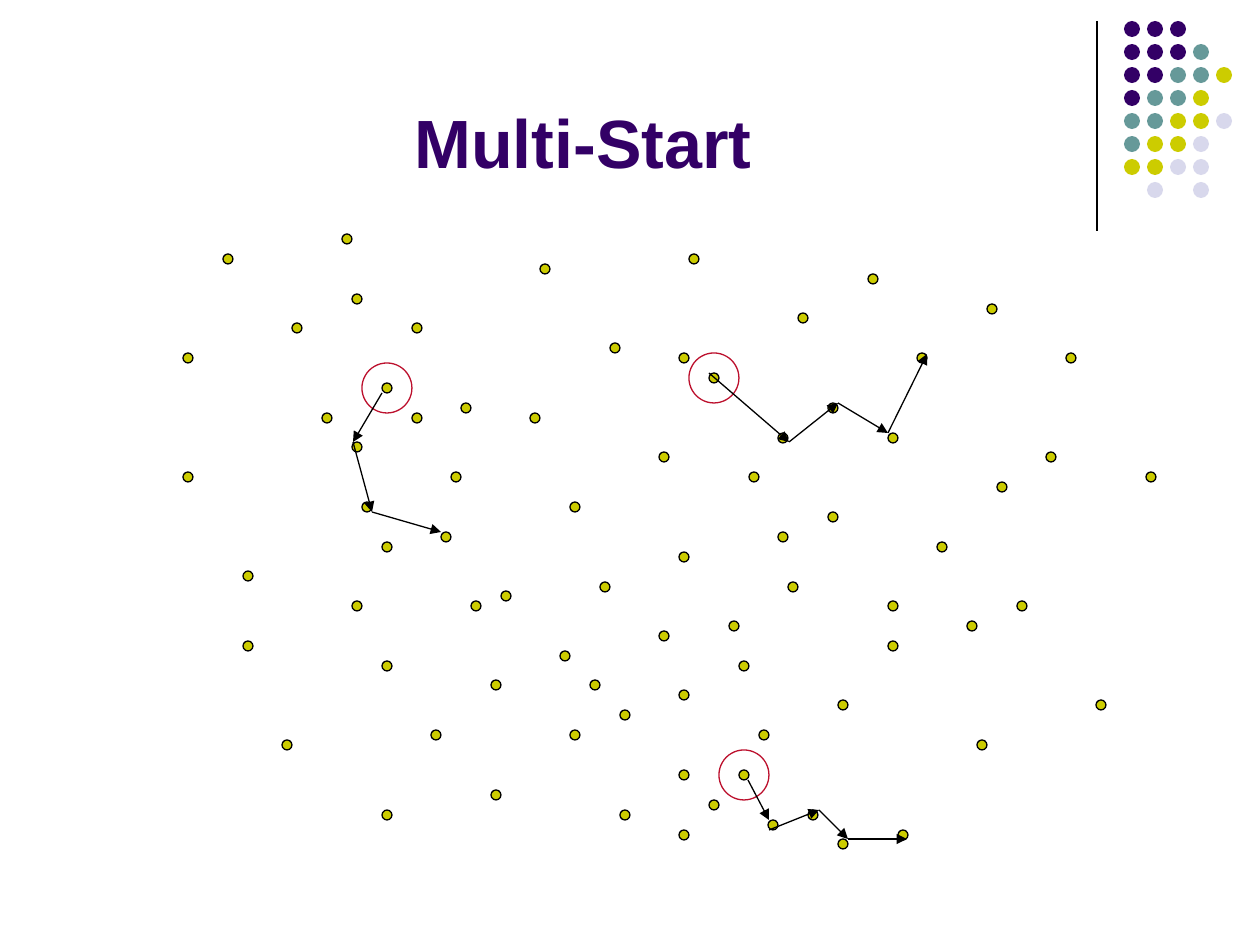
from itertools import pairwise

from lxml.etree import SubElement
from pptx import Presentation
from pptx.dml.color import RGBColor
from pptx.enum.shapes import MSO_CONNECTOR, MSO_SHAPE
from pptx.enum.text import MSO_ANCHOR, PP_ALIGN
from pptx.oxml.ns import qn
from pptx.util import Emu, Pt

PX_PER_INCH = 126
SLIDE_SIZE = (1260, 945)
BLACK, PURPLE, OLIVE, RED = "000000", "330066", "CCCC00", "BC102D"

TITLE = "Multi-Start"
TITLE_BOX = (63, 9, 1040, 179)

# Corner ornament: one letter per dot, a space where there is none
ORNAMENT_COLORS = {"P": PURPLE, "T": "669999", "O": OLIVE, "L": "D8D8EC"}
ORNAMENT = ["PPP", "PPPT", "PPTTO", "PTTO", "TTOOL", "TOOL", "OOLL", " L L"]
ORNAMENT_CENTER, ORNAMENT_PITCH, ORNAMENT_DOT = (1132, 29), 23, 16
RULE = [(1097, 21), (1097, 231)]

# Solutions in the search space, as centres, by rows from the top
SOLUTIONS = [
    (347, 239), (228, 259), (694, 259), (545, 269), (873, 279), (357, 299),
    (992, 309), (803, 318), (297, 328), (417, 328), (615, 348), (188, 358),
    (684, 358), (922, 358), (1071, 358), (714, 378), (387, 388), (466, 408),
    (833, 408), (327, 418), (417, 418), (535, 418), (783, 438), (893, 438),
    (357, 447), (664, 457), (1051, 457), (188, 477), (456, 477), (754, 477),
    (1151, 477), (1002, 487), (367, 507), (575, 507), (833, 517), (446, 537),
    (783, 537), (387, 547), (942, 547), (684, 557), (248, 576), (605, 587),
    (793, 587), (506, 596), (357, 606), (476, 606), (893, 606), (1022, 606),
    (734, 626), (972, 626), (664, 636), (248, 646), (893, 646), (565, 656),
    (387, 666), (744, 666), (496, 685), (595, 685), (684, 695), (843, 705),
    (1101, 705), (625, 715), (436, 735), (575, 735), (764, 735), (287, 745),
    (982, 745), (684, 775), (744, 775), (496, 795), (714, 805), (387, 815),
    (625, 815), (813, 815), (773, 825), (684, 835), (903, 835), (843, 844),
]
SOLUTION_DOT = 10

STARTS = [(387, 388), (714, 378), (744, 775)]
START_RING = 50
SEARCH_PATHS = [
    [(382, 393), (353, 442), (372, 512), (441, 532)],
    [(709, 373), (789, 442), (838, 403), (888, 433), (927, 354)],
    [(748, 780), (769, 820)],
    [(769, 830), (819, 810), (848, 839), (907, 839)],
]


def px(length):
    return Emu(round(length * 914400 / PX_PER_INCH))


def color(hex_code):
    return RGBColor.from_string(hex_code)


def set_line(line, hex_code):
    line.color.rgb = color(hex_code)
    line.width = Pt(0.75)


def add_circle(slide, center, diameter, fill=None, outline=None):
    left, top = (c - diameter / 2 for c in center)
    circle = slide.shapes.add_shape(
        MSO_SHAPE.OVAL, px(left), px(top), px(diameter), px(diameter))
    circle.shadow.inherit = False
    if fill:
        circle.fill.solid()
        circle.fill.fore_color.rgb = color(fill)
    else:
        circle.fill.background()
    if outline:
        set_line(circle.line, outline)
    else:
        circle.line.fill.background()


def add_line(slide, start, end, arrow=False):
    connector = slide.shapes.add_connector(
        MSO_CONNECTOR.STRAIGHT, *map(px, start + end))
    set_line(connector.line, BLACK)
    properties = connector._element.spPr
    if arrow:
        SubElement(properties.find(qn("a:ln")), qn("a:tailEnd"), type="triangle")
    SubElement(properties, qn("a:effectLst"))


def add_title(slide):
    frame = slide.shapes.add_textbox(*map(px, TITLE_BOX)).text_frame
    frame.word_wrap = True
    frame.vertical_anchor = MSO_ANCHOR.BOTTOM
    title = frame.paragraphs[0]
    title.text = TITLE
    title.alignment = PP_ALIGN.CENTER
    title.font.name = "Arial"
    title.font.size = Pt(39)
    title.font.bold = True
    title.font.color.rgb = color(PURPLE)


def add_ornament(slide):
    add_line(slide, *RULE)
    x, y = ORNAMENT_CENTER
    for row, letters in enumerate(ORNAMENT):
        for column, letter in enumerate(letters):
            if letter in ORNAMENT_COLORS:
                center = (x + column * ORNAMENT_PITCH, y + row * ORNAMENT_PITCH)
                add_circle(slide, center, ORNAMENT_DOT, ORNAMENT_COLORS[letter])


def main():
    presentation = Presentation()
    presentation.slide_width, presentation.slide_height = map(px, SLIDE_SIZE)
    slide = presentation.slides.add_slide(presentation.slide_layouts[6])

    add_ornament(slide)
    for center in SOLUTIONS:
        add_circle(slide, center, SOLUTION_DOT, OLIVE, BLACK)
    for center in STARTS:
        add_circle(slide, center, START_RING, outline=RED)
    for points in SEARCH_PATHS:
        for start, end in pairwise(points):
            add_line(slide, start, end, arrow=True)
    add_title(slide)

    presentation.save("out.pptx")


if __name__ == "__main__":
    main()
